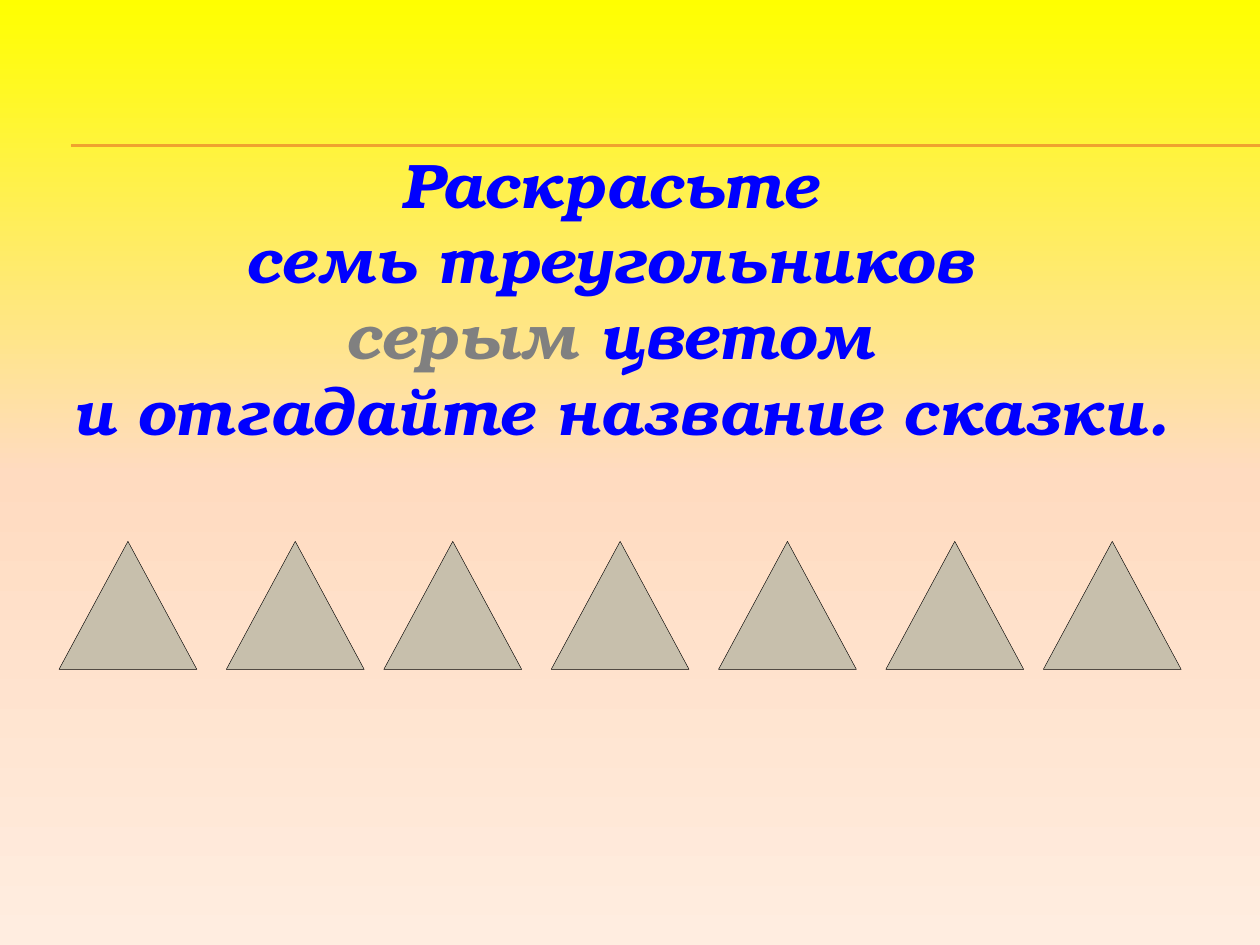
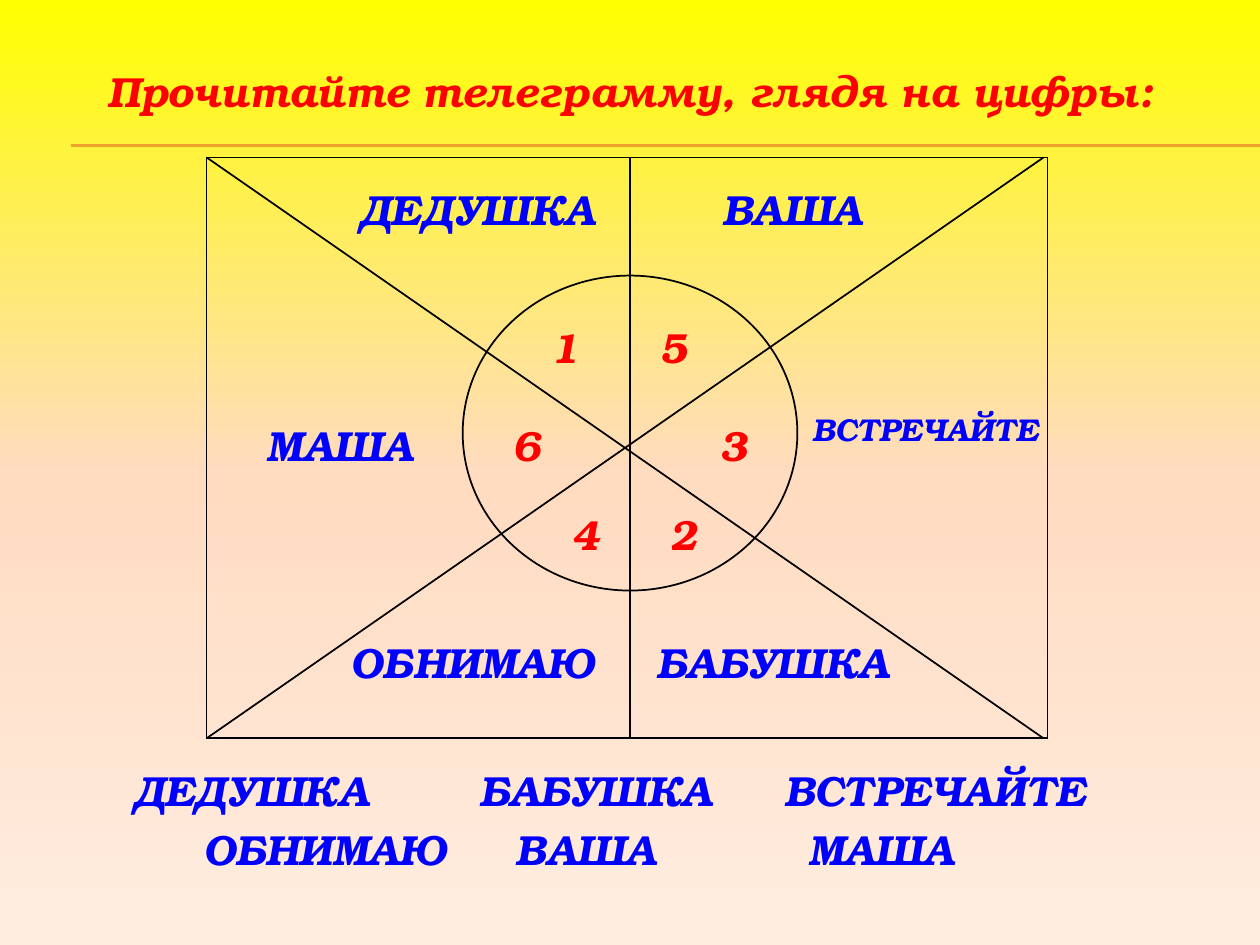
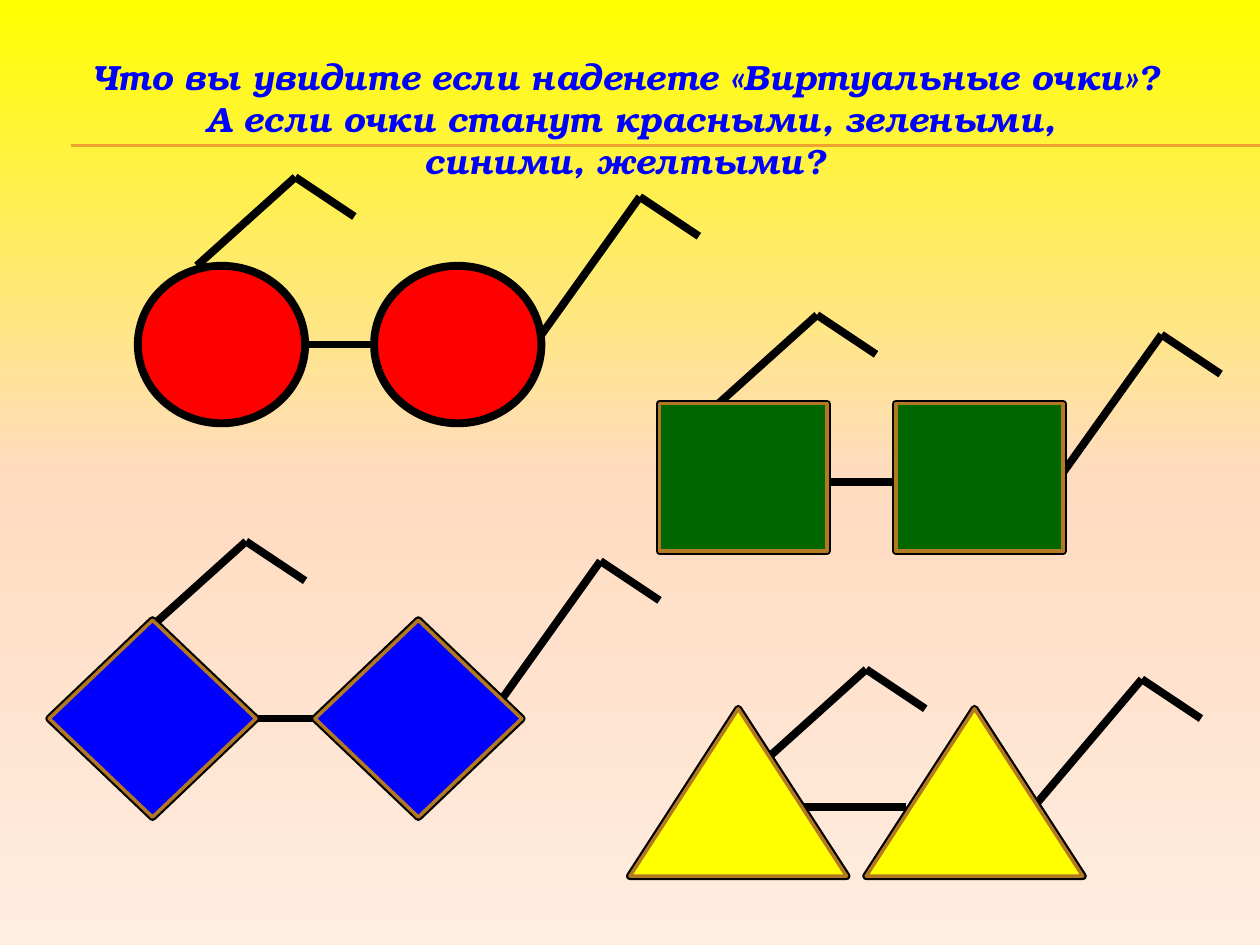
"""Build three puzzle slides on a shared grid of 128 columns by 96 rows."""
import copy
import dataclasses
import typing

import pptx
import pptx.dml.color
import pptx.enum.shapes
import pptx.enum.text
import pptx.oxml
import pptx.oxml.ns
import pptx.util

COLS, ROWS = 128, 96
WIDE, HIGH = pptx.util.Inches(10), pptx.util.Inches(7.5)
KIND = pptx.enum.shapes.MSO_SHAPE
MID = pptx.enum.text.MSO_ANCHOR.MIDDLE
TOP = pptx.enum.text.MSO_ANCHOR.TOP


@dataclasses.dataclass(frozen=True)
class Theme:
    """Colours, type sizes and line widths of the deck."""
    font: str = "TeX Gyre Bonum"
    black: str = "000000"
    blue: str = "0000FF"
    red: str = "FF0000"
    green: str = "006600"
    yellow: str = "FFFF00"
    gray: str = "808080"
    stone: str = "C7BFAC"
    rule: str = "F0A22E"
    brown: str = "B27822"
    back: tuple[str, ...] = ("FFFF00", "FFDBC0", "FFEDE0")
    huge: int = 36
    head: int = 24
    ask: int = 20
    small: int = 18
    hair: float = 0.25
    fine: float = 0.75
    thin: float = 1
    rim: float = 2
    bold: float = 4.5


THEME = Theme()


class Dot(typing.NamedTuple):
    """A point in grid cells."""
    x: float
    y: float

    def move(self, x: float, y: float) -> "Dot":
        """Return the point shifted by some cells."""
        return Dot(self.x + x, self.y + y)


class Box(typing.NamedTuple):
    """A frame in grid cells."""
    x: float
    y: float
    w: float
    h: float


class Bit(typing.NamedTuple):
    """A piece of text with its own colour."""
    text: str
    tint: str


@dataclasses.dataclass(frozen=True)
class Word:
    """One label of the telegram: places in the wheel and in the answer."""
    text: str
    wheel: Dot
    reply: Dot
    digit: Dot
    width: float = 31
    size: int = THEME.head


@dataclasses.dataclass(frozen=True)
class Specs:
    """A pair of glasses: lens, gap, bridge and arms."""
    kind: KIND
    tint: str
    lens: Box
    step: float
    bridge: tuple[Dot, Dot]
    left: Dot
    right: Dot
    reach: Dot = Dot(10, -14)
    edge: str = THEME.brown


WORDS = (
    Word("ДЕДУШКА", Dot(33, 18), Dot(10, 77), Dot(53, 32)),
    Word("БАБУШКА", Dot(63, 64), Dot(45, 77), Dot(65, 51)),
    Word("ВСТРЕЧАЙТЕ", Dot(76, 41), Dot(77, 77), Dot(70, 42), 36, THEME.small),
    Word("ОБНИМАЮ", Dot(30, 64), Dot(15, 83), Dot(55, 51), 36),
    Word("ВАША", Dot(65, 18), Dot(44, 83), Dot(64, 32)),
    Word("МАША", Dot(19, 42), Dot(74, 83), Dot(49, 42)),
)

PAIRS = (
    Specs(KIND.OVAL, THEME.red, Box(14, 27, 17, 16), 24,
          (Dot(31, 35), Dot(38, 35)), Dot(20, 27), Dot(55, 34), edge=THEME.black),
    Specs(KIND.RECTANGLE, THEME.green, Box(67, 41, 17, 15), 24,
          (Dot(84, 49), Dot(91, 49)), Dot(73, 41), Dot(108, 48)),
    Specs(KIND.DIAMOND, THEME.blue, Box(5, 63, 21, 20), 27,
          (Dot(25, 73), Dot(32, 73)), Dot(15, 64), Dot(51, 71)),
    Specs(KIND.ISOSCELES_TRIANGLE, THEME.yellow, Box(64, 72, 22, 17), 24,
          (Dot(81, 82), Dot(92, 82)), Dot(78, 77), Dot(105, 82), Dot(11, -13)),
)


def across(cells: float) -> int:
    """Turn columns into a length."""
    return round(WIDE * cells / COLS)


def down(cells: float) -> int:
    """Turn rows into a length."""
    return round(HIGH * cells / ROWS)


def frame(box: Box) -> tuple[int, int, int, int]:
    """Turn a box into left, top, width and height."""
    return across(box.x), down(box.y), across(box.w), down(box.h)


def hue(code: str) -> pptx.dml.color.RGBColor:
    """Turn a hex code into a colour."""
    return pptx.dml.color.RGBColor.from_string(code)


def line(slide, start: Dot, end: Dot, tint: str, width: float) -> None:
    """Draw a straight line."""
    link = slide.shapes.add_connector(
        pptx.enum.shapes.MSO_CONNECTOR.STRAIGHT,
        across(start.x), down(start.y), across(end.x), down(end.y))
    link.line.color.rgb = hue(tint)
    link.line.width = pptx.util.Pt(width)
    pptx.oxml.ns.qn("a:effectLst")
    link.element.spPr.append(pptx.oxml.parse_xml(
        f"<a:effectLst {pptx.oxml.ns.nsdecls('a')}/>"))


def chain(slide, dots: typing.Sequence[Dot], tint: str, width: float) -> None:
    """Draw lines from each point to the next."""
    for start, end in zip(dots, dots[1:]):
        line(slide, start, end, tint, width)


def form(slide, kind: KIND, box: Box, fill: str | None, edge: str, width: float) -> None:
    """Draw a preset shape."""
    shape = slide.shapes.add_shape(kind, *frame(box))
    shape.shadow.inherit = False
    if fill:
        shape.fill.solid()
        shape.fill.fore_color.rgb = hue(fill)
    else:
        shape.fill.background()
    shape.line.color.rgb = hue(edge)
    shape.line.width = pptx.util.Pt(width)


def text(slide, box: Box, rows: typing.Sequence[typing.Sequence[Bit]],
         size: int, anchor=TOP) -> None:
    """Write centred bold italic paragraphs."""
    body = slide.shapes.add_textbox(*frame(box)).text_frame
    body.word_wrap = True
    body.auto_size = pptx.enum.text.MSO_AUTO_SIZE.SHAPE_TO_FIT_TEXT
    body.vertical_anchor = anchor
    for spot, bits in enumerate(rows):
        para = body.add_paragraph() if spot else body.paragraphs[0]
        para.alignment = pptx.enum.text.PP_ALIGN.CENTER
        font = para.font
        font.name, font.size = THEME.font, pptx.util.Pt(size)
        font.bold = font.italic = True
        font.color.rgb = hue(bits[0].tint)
        for bit in bits:
            run = para.add_run()
            run.text = bit.text
            if bit.tint != bits[0].tint:
                run.font.color.rgb = hue(bit.tint)


def label(slide, spot: Dot, width: float, words: str, tint: str, size: int) -> None:
    """Write one line of text."""
    text(slide, Box(*spot, width, 6.4 if size == THEME.head else 5.1),
         [[Bit(words, tint)]], size)


def grid(slide, box: Box) -> None:
    """Draw a table of one clear cell with a black border."""
    table = slide.shapes.add_table(1, 1, *frame(box)).table
    table.first_row = table.horz_banding = False
    cell = table.cell(0, 0)
    cell.fill.background()
    props = cell._tc.get_or_add_tcPr()
    for spot, side in enumerate("LRTB"):
        props.insert(spot, pptx.oxml.parse_xml(
            f'<a:ln{side} {pptx.oxml.ns.nsdecls("a")} w="{pptx.util.Pt(THEME.thin)}">'
            f'<a:solidFill><a:srgbClr val="{THEME.black}"/></a:solidFill></a:ln{side}>'))


def paint(master) -> None:
    """Give the master its gradient of three stops."""
    fill = master.background.fill
    fill.gradient()
    fill.gradient_angle = 270
    stops = master.element.find(".//" + pptx.oxml.ns.qn("a:gsLst"))
    stops.append(copy.deepcopy(stops[-1]))
    for spot, (stop, tint) in enumerate(zip(fill.gradient_stops, THEME.back)):
        stop.position = spot / 2
        stop.color.rgb = hue(tint)


def page(deck):
    """Add a blank slide with the double rule."""
    slide = deck.slides.add_slide(deck.slide_layouts[6])
    for y in (14.72, 14.85):
        line(slide, Dot(7.2, y), Dot(COLS, y), THEME.rule, THEME.fine)
    return slide


def color(deck) -> None:
    """Build the slide with seven triangles."""
    slide = page(deck)
    blue = THEME.blue
    text(slide, Box(4, 14, 118, 32.25), [
        [Bit("Раскрасьте ", blue)],
        [Bit("семь треугольников ", blue)],
        [Bit("серым ", THEME.gray), Bit("цветом ", blue)],
        [Bit("и отгадайте название сказки.", blue)],
    ], THEME.huge, MID)
    for x in (6, 23, 39, 56, 73, 90, 106):
        form(slide, KIND.ISOSCELES_TRIANGLE, Box(x, 55, 14, 13),
             THEME.stone, THEME.black, THEME.hair)


def wire(deck) -> None:
    """Build the telegram slide."""
    slide = page(deck)
    area = Box(21, 16, 85.4, 59)
    grid(slide, area)
    base = area.y + area.h
    for start, end in ((Dot(21, 16), Dot(106, base)), (Dot(21, base), Dot(106, 16)),
                       (Dot(64, 16), Dot(64, base))):
        line(slide, start, end, THEME.black, THEME.thin)
    form(slide, KIND.OVAL, Box(47, 28, 34, 32), None, THEME.black, THEME.thin)
    for rank, word in enumerate(WORDS, 1):
        label(slide, word.wheel, word.width, word.text, THEME.blue, word.size)
        label(slide, word.reply, word.width, word.text, THEME.blue, THEME.head)
        label(slide, word.digit, 9, str(rank), THEME.red, THEME.head)
    label(slide, Dot(0, 6), COLS, "Прочитайте телеграмму, глядя на цифры:",
          THEME.red, THEME.head)


def wear(slide, pair: Specs) -> None:
    """Draw one pair of glasses."""
    for start, reach in ((pair.left, Dot(10, -9)), (pair.right, pair.reach)):
        bend = start.move(*reach)
        chain(slide, (start, bend, bend.move(6, 4)), THEME.black, THEME.bold)
    chain(slide, pair.bridge, THEME.black, THEME.bold)
    for shift in (0, pair.step):
        box = pair.lens._replace(x=pair.lens.x + shift)
        if pair.edge == THEME.black:
            form(slide, pair.kind, box, pair.tint, pair.edge, THEME.bold)
        else:
            form(slide, pair.kind, box, None, THEME.black, THEME.bold)
            form(slide, pair.kind, box, pair.tint, pair.edge, THEME.rim)


def look(deck) -> None:
    """Build the slide with four pairs of glasses."""
    slide = page(deck)
    for pair in PAIRS:
        wear(slide, pair)
    text(slide, Box(7, 5, 113, 14.2), [
        [Bit("Что вы увидите если наденете «Виртуальные очки»?", THEME.blue)],
        [Bit(" А если очки станут красными, зелеными,", THEME.blue)],
        [Bit("синими, желтыми?", THEME.blue)],
    ], THEME.ask)


def main() -> None:
    """Build and save the deck."""
    deck = pptx.Presentation()
    deck.slide_width, deck.slide_height = WIDE, HIGH
    paint(deck.slide_master)
    for build in (color, wire, look):
        build(deck)
    deck.save("out.pptx")


if __name__ == "__main__":
    main()
